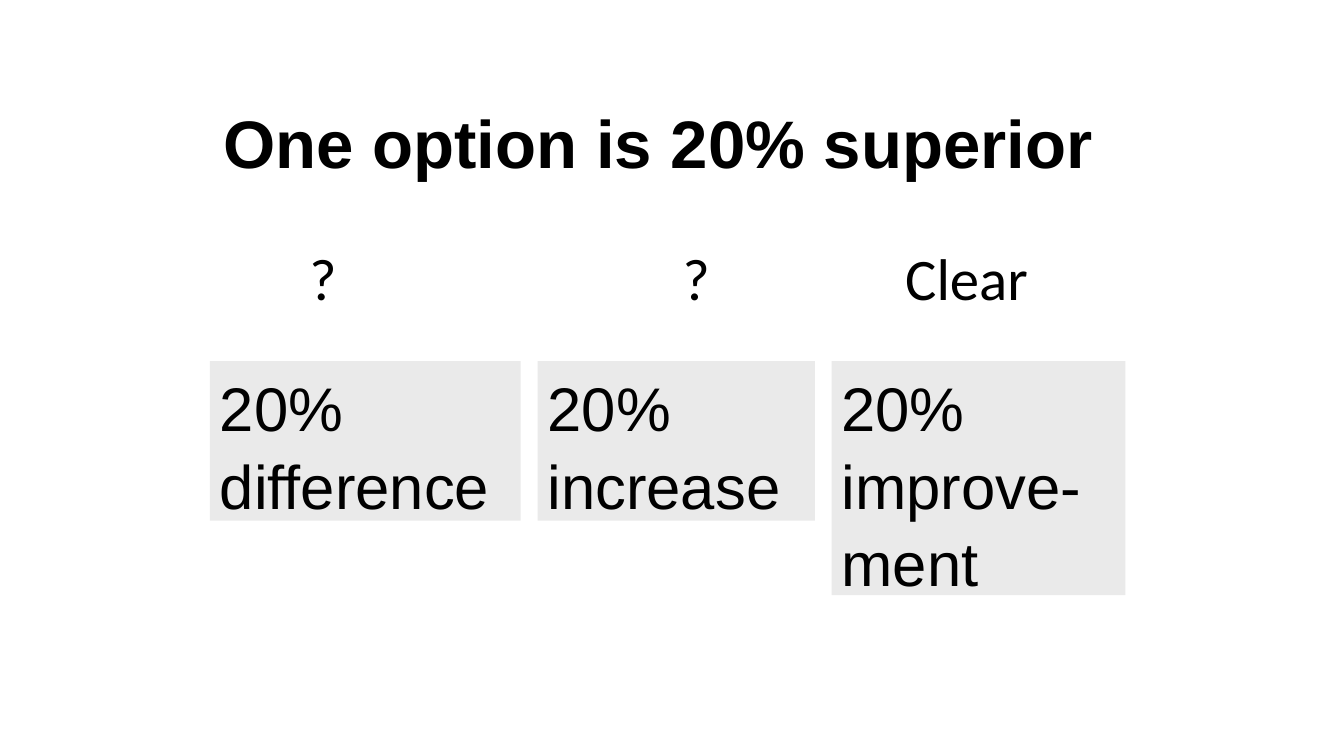
from pptx import Presentation
from pptx.dml.color import RGBColor
from pptx.enum import shapes, text
from pptx.util import Pt

BLACK = RGBColor(0x00, 0x00, 0x00)
GREY = RGBColor(0xEA, 0xEA, 0xEA)


def write(sp, lines, font, size, bold=False):
    tf = sp.text_frame
    tf.word_wrap = True
    tf.vertical_anchor = text.MSO_ANCHOR.TOP
    for i, line in enumerate(lines):
        p = tf.add_paragraph() if i else tf.paragraphs[0]
        p.alignment = text.PP_ALIGN.LEFT
        p.line_spacing = 1.05
        r = p.add_run()
        r.text = line
        r.font.name = font
        r.font.size = Pt(size)
        r.font.bold = bold
        r.font.color.rgb = BLACK


prs = Presentation()
prs.slide_width, prs.slide_height = Pt(960), Pt(540)
slide = prs.slides.add_slide(prs.slide_layouts[6])

# Title
title = slide.shapes.add_textbox(Pt(152.5), Pt(66), Pt(670), Pt(65.5))
write(title, ["One option is 20% superior"], "Arial", 48, bold=True)

# Columns: verdict above, grey wording card below
columns = [
    ("?", 214, 150, 222, ["20%", "difference"]),
    ("?", 480.5, 384, 198, ["20%", "increase"]),
    ("Clear", 639.5, 594, 210, ["20%", "improve-", "ment"]),
]
for verdict, verdict_left, card_left, card_width, wording in columns:
    label = slide.shapes.add_textbox(Pt(verdict_left), Pt(166.5), Pt(130), Pt(60.5))
    write(label, [verdict], "Calibri", 42)

    card_height = 7.2 + 53.3 * len(wording)
    card = slide.shapes.add_shape(shapes.MSO_SHAPE.RECTANGLE, Pt(card_left), Pt(258),
                                  Pt(card_width), Pt(card_height))
    card.shadow.inherit = False
    card.fill.solid()
    card.fill.fore_color.rgb = GREY
    card.line.fill.background()
    write(card, wording, "Arial", 44)

prs.save("out.pptx")
